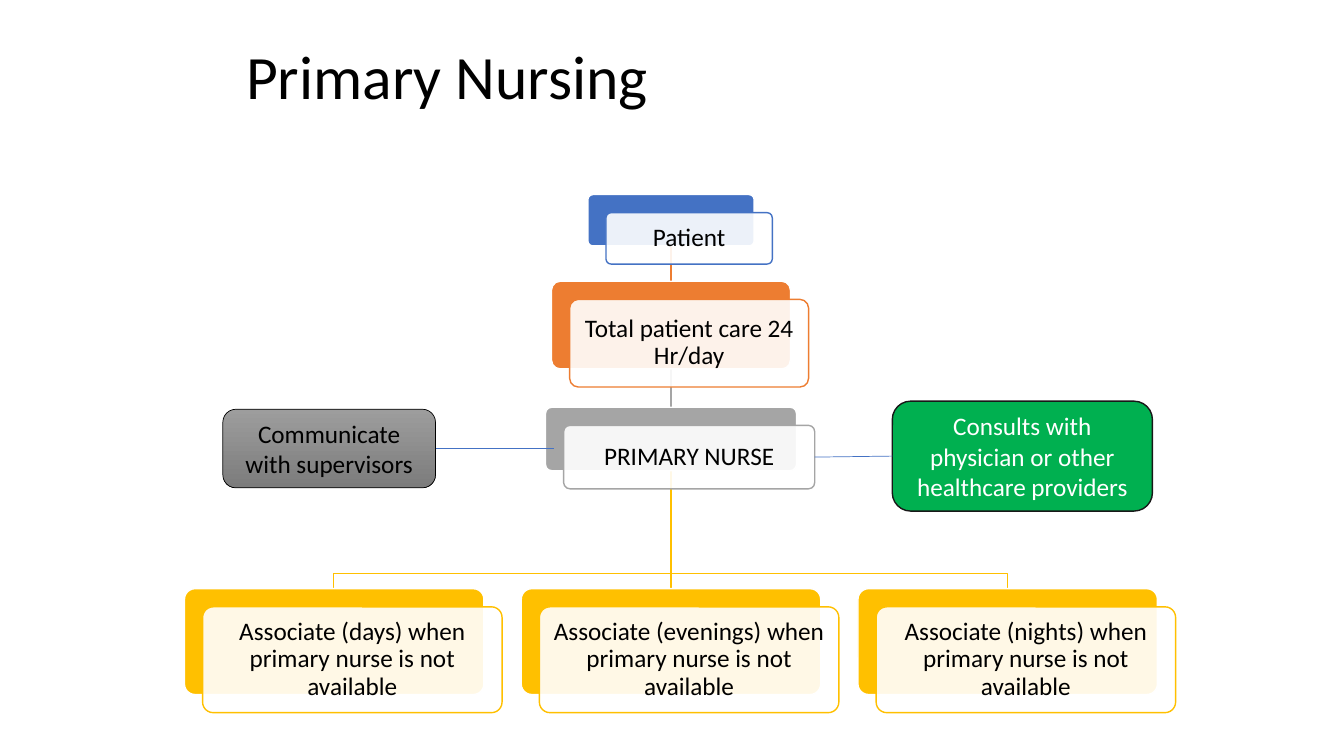
from dataclasses import dataclass

from lxml.etree import SubElement
from pptx import Presentation
from pptx.dml.color import RGBColor
from pptx.enum.shapes import MSO_CONNECTOR, MSO_SHAPE
from pptx.enum.text import MSO_ANCHOR, PP_ALIGN
from pptx.oxml.ns import qn
from pptx.shapes.autoshape import Shape
from pptx.shapes.connector import Connector
from pptx.slide import Slide
from pptx.util import Pt

PX = 9144
FONT = "Calibri"
BLACK = RGBColor(0x00, 0x00, 0x00)
WHITE = RGBColor(0xFF, 0xFF, 0xFF)
BLUE = RGBColor(0x44, 0x72, 0xC4)
ORANGE = RGBColor(0xED, 0x7D, 0x31)
GRAY = RGBColor(0xA5, 0xA5, 0xA5)
GOLD = RGBColor(0xFF, 0xC0, 0x00)
GREEN = RGBColor(0x00, 0xB0, 0x50)
NEAR_BLACK = RGBColor(0x18, 0x18, 0x18)
LIGHT_STEEL = RGBColor(0x9D, 0x9D, 0x9D)
DARK_STEEL = RGBColor(0x7C, 0x7C, 0x7C)
TOP, LEFT, BOTTOM, RIGHT = range(4)
CARD_OFFSET = 18
BRANCH_Y = 569


@dataclass(frozen=True)
class Box:
    left: int
    top: int
    width: int
    height: int

    @property
    def center(self) -> int:
        return self.left + self.width // 2

    @property
    def bottom(self) -> int:
        return self.top + self.height


@dataclass(frozen=True)
class Role:
    label: str
    box: Box
    color: RGBColor


@dataclass(frozen=True)
class Card:
    back: Shape
    front: Shape


def add_rounded(slide: Slide, box: Box, line: RGBColor, weight: float) -> Shape:
    rounded = slide.shapes.add_shape(
        MSO_SHAPE.ROUNDED_RECTANGLE,
        box.left * PX, box.top * PX, box.width * PX, box.height * PX)
    rounded.shadow.inherit = False
    rounded.line.color.rgb = line
    rounded.line.width = Pt(weight)
    return rounded


def write(shape: Shape, label: str, color: RGBColor, size: int = 18,
          align: PP_ALIGN = PP_ALIGN.CENTER, spacing: float = 1.0) -> None:
    frame = shape.text_frame
    frame.text = label
    frame.word_wrap = True
    frame.vertical_anchor = MSO_ANCHOR.MIDDLE
    for paragraph in frame.paragraphs:
        paragraph.alignment = align
        paragraph.line_spacing = spacing
        for run in paragraph.runs:
            run.font.name = FONT
            run.font.size = Pt(size)
            run.font.color.rgb = color


def add_card(slide: Slide, role: Role) -> Card:
    box = role.box
    back = add_rounded(slide, box, WHITE, 1)
    back.fill.solid()
    back.fill.fore_color.rgb = role.color
    raised = Box(box.left + CARD_OFFSET, box.top + CARD_OFFSET, box.width, box.height)
    front = add_rounded(slide, raised, role.color, 1)
    front.fill.solid()
    front.fill.fore_color.rgb = WHITE
    tint = front.fill._xPr.find(qn("a:solidFill"))[0]
    SubElement(tint, qn("a:alpha"), val="90000")
    for part in (back, front):
        part.adjustments[0] = 0.1
    frame = front.text_frame
    frame.margin_left = frame.margin_right = 9 * PX
    frame.margin_top = frame.margin_bottom = 9 * PX
    write(front, role.label, BLACK, spacing=0.9)
    return Card(back, front)


def add_link(slide: Slide, start: tuple[int, int], end: tuple[int, int],
             color: RGBColor, weight: float) -> Connector:
    link = slide.shapes.add_connector(
        MSO_CONNECTOR.STRAIGHT,
        start[0] * PX, start[1] * PX, end[0] * PX, end[1] * PX)
    link.line.color.rgb = color
    link.line.width = Pt(weight)
    SubElement(link._element.spPr, qn("a:effectLst"))
    return link


def send_to_back(slide: Slide, shape: Shape | Connector) -> None:
    slide.shapes._spTree.insert(2, shape._element)


def link_down(slide: Slide, parent: Card, child: Card, upper: Box, role: Role) -> None:
    link = add_link(slide, (upper.center, upper.bottom),
                    (role.box.center, role.box.top), role.color, 1)
    link.begin_connect(parent.back, BOTTOM)
    link.end_connect(child.back, TOP)
    send_to_back(slide, link)


def add_branch(slide: Slide, upper: Box, role: Role) -> None:
    builder = slide.shapes.build_freeform(upper.center, upper.bottom, scale=PX)
    builder.add_line_segments(
        [(upper.center, BRANCH_Y), (role.box.center, BRANCH_Y),
         (role.box.center, role.box.top)], close=False)
    branch = builder.convert_to_shape()
    branch.shadow.inherit = False
    branch.fill.background()
    branch.line.color.rgb = role.color
    branch.line.width = Pt(1)
    send_to_back(slide, branch)


def main() -> None:
    deck = Presentation()
    deck.slide_width, deck.slide_height = 1333 * PX, 750 * PX
    slide = deck.slides.add_slide(deck.slide_layouts[5])

    title = slide.shapes.title
    title.left, title.top, title.width, title.height = (
        234 * PX, 25 * PX, 892 * PX, 108 * PX)
    write(title, "Primary Nursing", BLACK, 44, PP_ALIGN.LEFT, 0.9)

    chain = [
        Role("Patient", Box(583, 193, 165, 51), BLUE),
        Role("Total patient care 24 Hr/day", Box(547, 279, 237, 87), ORANGE),
        Role("PRIMARY NURSE", Box(541, 404, 249, 63), GRAY),
    ]
    chain_cards = [add_card(slide, role) for role in chain]
    for index in range(1, len(chain)):
        link_down(slide, chain_cards[index - 1], chain_cards[index],
                  chain[index - 1].box, chain[index])
    nurse, nurse_card = chain[-1], chain_cards[-1]

    for index, shift in enumerate(("days", "evenings", "nights")):
        associate = Role(f"Associate ({shift}) when primary nurse is not available",
                         Box(183 + 334 * index, 584, 297, 105), GOLD)
        associate_card = add_card(slide, associate)
        if associate.box.center == nurse.box.center:
            link_down(slide, nurse_card, associate_card, nurse.box, associate)
        else:
            add_branch(slide, nurse.box, associate)

    supervisors = add_rounded(slide, Box(221, 406, 211, 78), BLACK, 0.5)
    supervisors.fill.gradient()
    supervisors.fill.gradient_angle = 270
    for stop, shade in zip(supervisors.fill.gradient_stops, (LIGHT_STEEL, DARK_STEEL)):
        stop.color.rgb = shade
    write(supervisors, "Communicate with supervisors", BLACK)
    reporting = add_link(slide, (432, 445), (549, 445), BLUE, 0.5)
    reporting.begin_connect(supervisors, RIGHT)

    providers = add_rounded(slide, Box(885, 398, 258, 109), NEAR_BLACK, 1)
    providers.fill.solid()
    providers.fill.fore_color.rgb = GREEN
    write(providers, "Consults with physician or other healthcare providers", WHITE)
    consulting = add_link(slide, (885, 453), (808, 453), BLUE, 0.5)
    consulting.begin_connect(providers, LEFT)
    consulting.end_connect(nurse_card.front, RIGHT)

    deck.save("out.pptx")


if __name__ == "__main__":
    main()
